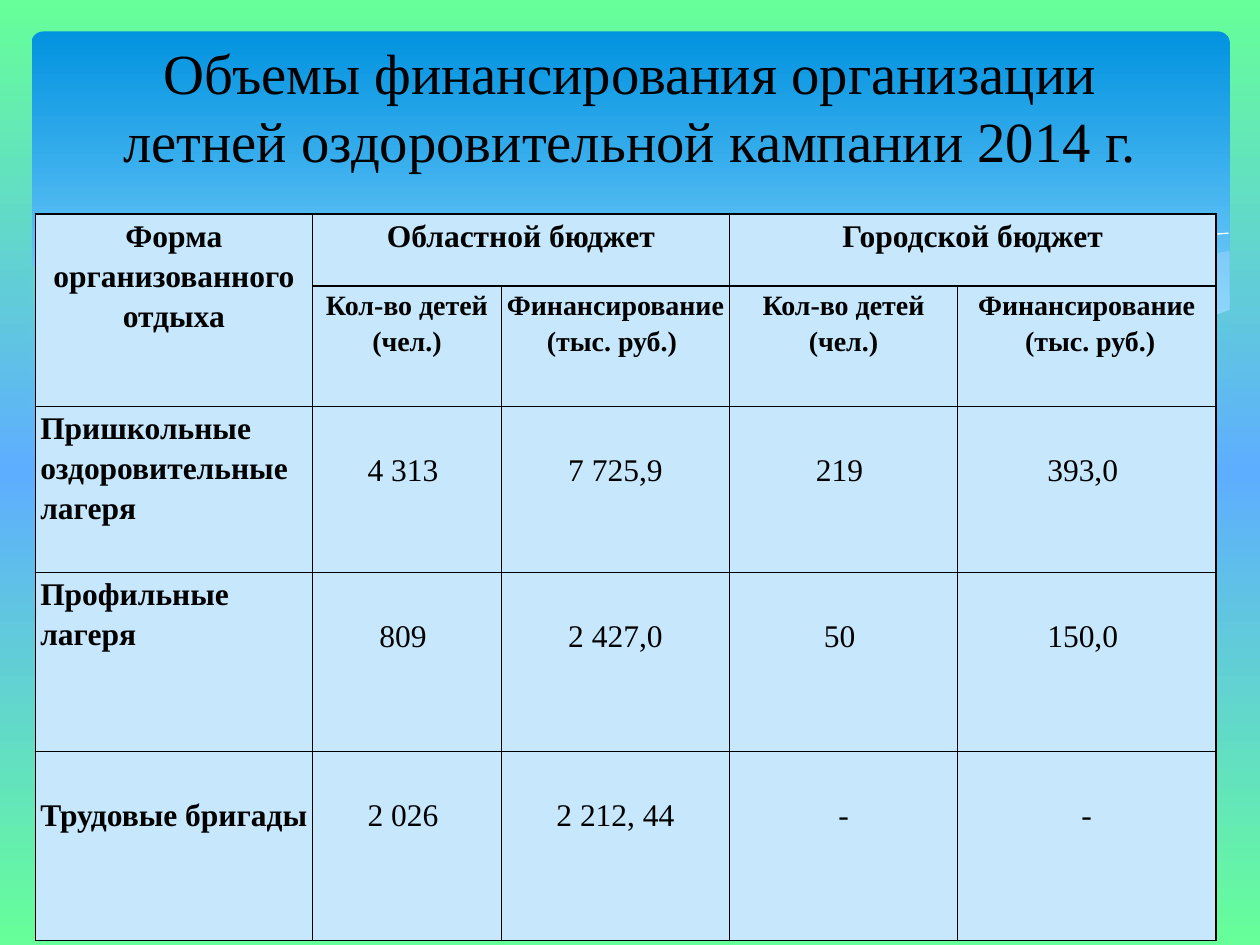
from lxml import etree
from pptx import Presentation
from pptx.dml.color import RGBColor
from pptx.enum.shapes import MSO_SHAPE
from pptx.enum.text import MSO_ANCHOR, PP_ALIGN
from pptx.oxml.ns import qn
from pptx.util import Inches, Pt

CENTER, JUSTIFY = PP_ALIGN.CENTER, PP_ALIGN.JUSTIFY
MIDDLE, ROUNDED = MSO_ANCHOR.MIDDLE, MSO_SHAPE.ROUNDED_RECTANGLE
FONT, BLACK, PALE = "Times New Roman", "000000", "C6E7FC"

TITLE = "Объемы финансирования организации летней оздоровительной кампании 2014 г."
GROUPS = ["Областной бюджет", "Городской бюджет"]
SUBHEADS = ["Кол-во детей\n(чел.)", "Финансирование\n(тыс. руб.) ",
            "Кол-во детей\n(чел.)", "Финансирование\n (тыс. руб.)"]
ROWS = [
    ("Пришкольные оздоровительные лагеря ", "4 313 ", "7 725,9", "219 ", "393,0 "),
    ("Профильные лагеря", "809 ", "2 427,0", "50 ", "150,0 "),
    ("Трудовые бригады", "2 026 ", "2 212, 44", "-", "-"),
]
COL_WIDTHS = [2.2, 1.5, 1.81, 1.81, 2.05]
ROW_HEIGHTS = [0.57, 0.95, 1.32, 1.42, 1.5]
ONE_LINE = 0.33

BACKGROUND = [(0, "66FF99"), (50, "5EAEFF"), (100, "66FF99")]
CARD = [(0, "0293E0"), (90, "83D3FE")]
FRONT_WAVE = [(0, "62D7CB"), (100, "5FB8F3")]
SWOOSH = [(9.76, 1.99), (9.21, 2.09), (8.61, 2.23), (7.79, 2.42), (7.06, 2.57),
          (6.61, 2.65), (7.18, 2.72), (7.69, 2.77), (8.14, 2.78), (8.63, 2.75),
          (9.05, 2.69), (9.42, 2.59), (9.76, 2.47)]
CREST = [(6.13, 2.57), (6.72, 2.41), (7.48, 2.23), (8.36, 2.04), (8.95, 1.94),
         (9.38, 1.88), (9.75, 1.85)]
WAVE = [(9.77, 2.46), (9.4, 2.59), (8.99, 2.69), (8.5, 2.75), (8.09, 2.77),
        (7.44, 2.74), (6.68, 2.65), (5.79, 2.5), (5.03, 2.33), (4.18, 2.13),
        (3.39, 1.97), (2.71, 1.88), (2.11, 1.84), (1.61, 1.84), (1.06, 1.89),
        (0.59, 1.99), (0.23, 2.13), (0.23, 3.29), (9.77, 3.29)]


def rgb(color):
    return RGBColor.from_string(color)


def set_gradient(fill, element, stops):
    fill.gradient()
    fill.gradient_angle = 270
    stop_list = element.find(".//" + qn("a:gsLst"))
    for stop in list(stop_list):
        stop_list.remove(stop)
    for pos, color in stops:
        stop = etree.SubElement(stop_list, qn("a:gs"), pos=str(pos * 1000))
        etree.SubElement(stop, qn("a:srgbClr"), val=color)


def add_outline(s, points, close=True):
    corners = [(Inches(x), Inches(y)) for x, y in points]
    builder = s.shapes.build_freeform(*corners[0])
    builder.add_line_segments(corners[1:], close=close)
    sp = builder.convert_to_shape()
    sp.shadow.inherit = False
    sp.line.fill.background()
    return sp


def style(p, size, bold, align):
    p.alignment = align
    p.font.name, p.font.size, p.font.bold = FONT, Pt(size), bold
    p.font.color.rgb = rgb(BLACK)


def add_borders(cell):
    tc_pr = cell._tc.get_or_add_tcPr()
    for i, side in enumerate(("lnL", "lnR", "lnT", "lnB")):
        ln = etree.Element(qn("a:" + side), w=str(Pt(1)))
        fill = etree.SubElement(ln, qn("a:solidFill"))
        etree.SubElement(fill, qn("a:srgbClr"), val=BLACK)
        tc_pr.insert(i, ln)


def write_cell(cell, text, size=18, bold=True, align=CENTER, top=0):
    cell.margin_top = Inches(top)
    cell.text = text
    for p in cell.text_frame.paragraphs:
        style(p, size, bold, align)
        p.line_spacing = 1.15


def add_backdrop(s):
    set_gradient(s.background.fill, s.element, BACKGROUND)
    card = s.shapes.add_shape(ROUNDED, Inches(0.25), Inches(0.25), Inches(9.51), Inches(2.7))
    card.adjustments[0] = 0.034
    card.shadow.inherit = False
    card.line.fill.background()
    set_gradient(card.fill, card._element, CARD)

    swoosh = add_outline(s, SWOOSH)
    swoosh.fill.solid()
    swoosh.fill.fore_color.rgb = rgb(PALE)
    color = swoosh._element.spPr.find(".//" + qn("a:srgbClr"))
    etree.SubElement(color, qn("a:alpha"), val="29000")

    crest = add_outline(s, CREST, close=False)
    crest.fill.background()
    crest.line.color.rgb = rgb("FFFFFF")
    crest.line.width = 0

    wave = add_outline(s, WAVE)
    set_gradient(wave.fill, wave._element, FRONT_WAVE)


def add_title(s):
    title = s.shapes.title
    s.shapes._spTree.append(title._element)
    title.left, title.top = Inches(0.5), Inches(0.21)
    title.width, title.height = Inches(9), Inches(1.26)
    title.text_frame.text = TITLE
    title.text_frame.vertical_anchor = MIDDLE
    style(title.text_frame.paragraphs[0], 32.4, False, CENTER)


def add_budget_table(s):
    table = s.shapes.add_table(len(ROW_HEIGHTS), len(COL_WIDTHS), Inches(0.28), Inches(1.7),
                               Inches(sum(COL_WIDTHS)), Inches(sum(ROW_HEIGHTS))).table
    for col, width in zip(table.columns, COL_WIDTHS):
        col.width = Inches(width)
    for row, height in zip(table.rows, ROW_HEIGHTS):
        row.height = Inches(height)
    for cell in table.iter_cells():
        cell.margin_left = cell.margin_right = Inches(0.04)
        cell.margin_top = cell.margin_bottom = 0
        cell.fill.solid()
        cell.fill.fore_color.rgb = rgb(PALE)
        add_borders(cell)

    table.cell(0, 0).merge(table.cell(1, 0))
    write_cell(table.cell(0, 0), "Форма организованного отдыха")
    for i, group in enumerate(GROUPS):
        first = 1 + 2 * i
        table.cell(0, first).merge(table.cell(0, first + 1))
        write_cell(table.cell(0, first), group)
    for c, text in enumerate(SUBHEADS, 1):
        write_cell(table.cell(1, c), text, size=16)
    for r, (name, *values) in enumerate(ROWS, 2):
        top = ONE_LINE if r == len(ROW_HEIGHTS) - 1 else 0
        write_cell(table.cell(r, 0), name, align=JUSTIFY, top=top)
        for c, value in enumerate(values, 1):
            write_cell(table.cell(r, c), value, bold=False, top=ONE_LINE)


def main():
    """Build the summer camp funding slide."""
    prs = Presentation()
    prs.slide_width, prs.slide_height = Inches(10), Inches(7.5)
    s = prs.slides.add_slide(prs.slide_layouts[5])
    add_backdrop(s)
    add_title(s)
    add_budget_table(s)
    prs.save("out.pptx")


if __name__ == "__main__":
    main()
